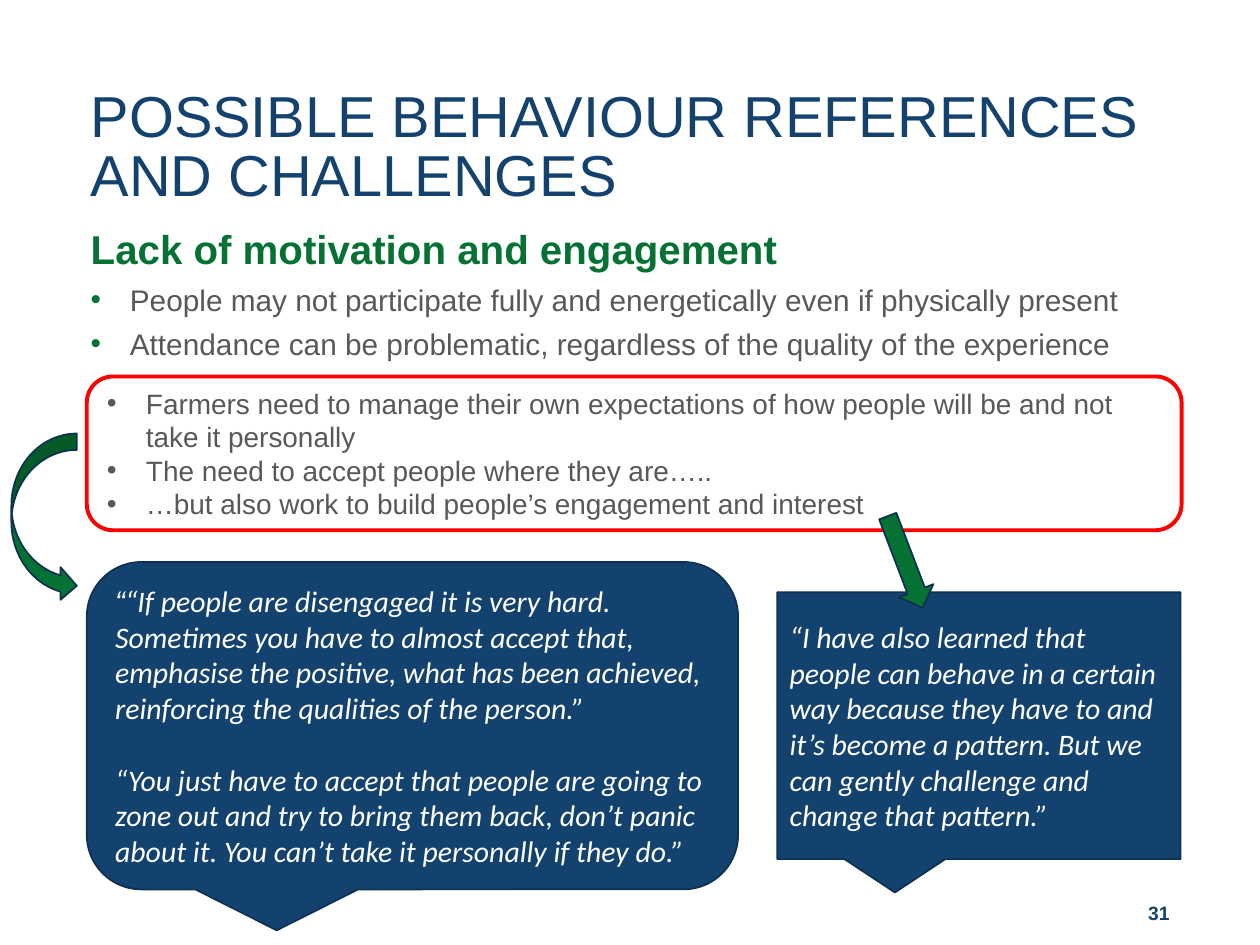
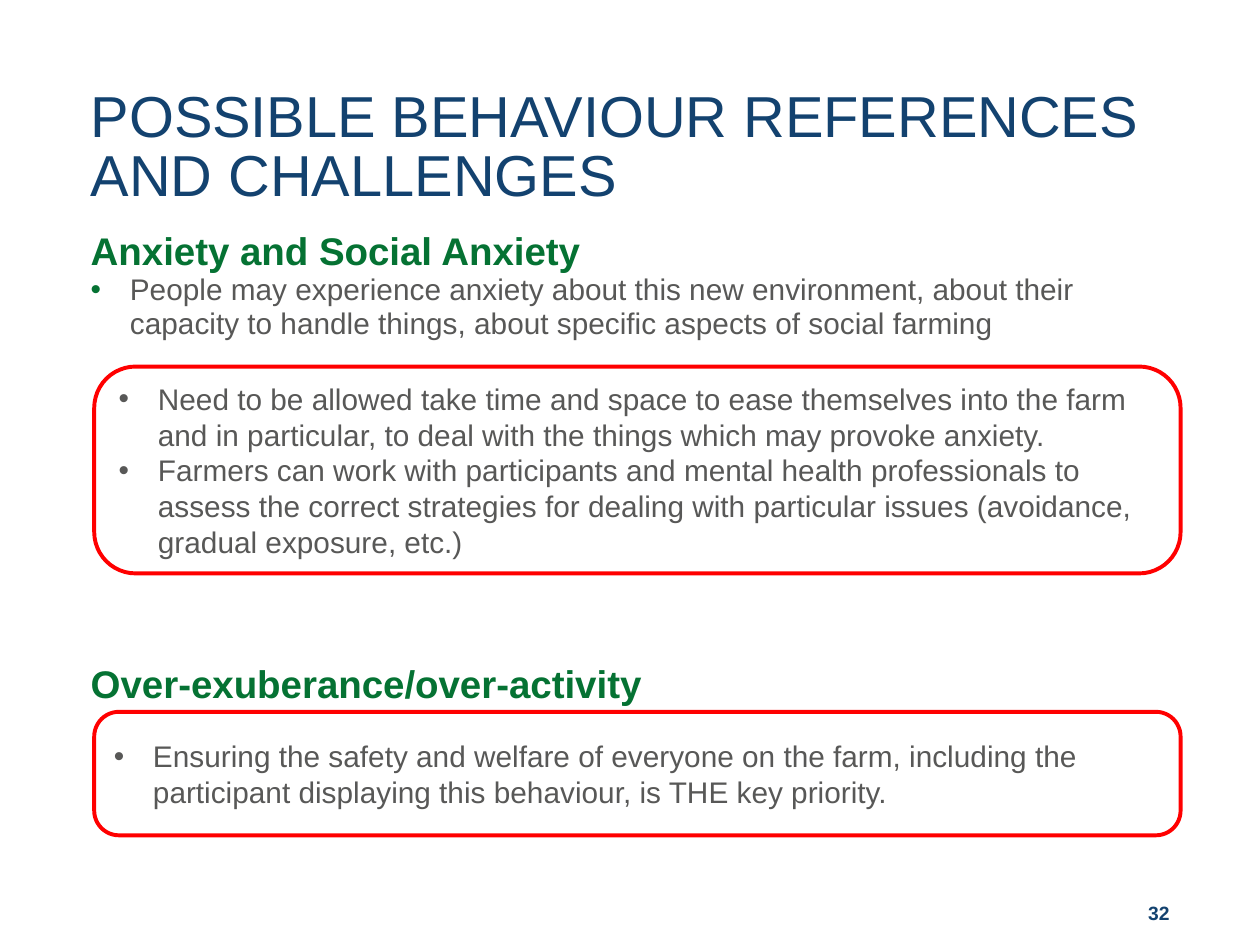
from lxml import etree
from pptx import Presentation
from pptx.dml.color import RGBColor
from pptx.enum.shapes import MSO_SHAPE as Shape
from pptx.enum.text import MSO_ANCHOR as Anchor, PP_ALIGN as Align
from pptx.oxml.ns import qn
from pptx.util import Cm, Pt

NAVY = RGBColor(0x13, 0x42, 0x6F)
NAVY_EDGE = RGBColor(0x0E, 0x31, 0x52)
GREEN = RGBColor(0x05, 0x72, 0x33)
GREY = RGBColor(0x58, 0x58, 0x57)
RED = RGBColor(0xFF, 0x00, 0x00)
WHITE = RGBColor(0xFF, 0xFF, 0xFF)

MARGIN = 1.8
BODY_LEFT, BODY_WIDTH = 0.03, 23.8
TITLE = "POSSIBLE BEHAVIOUR REFERENCES AND CHALLENGES"


# Text
def add_run(p, text, size=17, color=GREY, font="Arial", bold=False, italic=False):
    r = p.add_run()
    r.text = text
    f = r.font
    f.size, f.name, f.bold, f.italic = Pt(size), font, bold, italic
    f.color.rgb = color


def add_bullet(p, color=None):
    pPr = p._p.get_or_add_pPr()
    pPr.set("marL", str(Cm(0.79)))
    pPr.set("indent", str(-Cm(0.79)))
    if color is not None:
        clr = etree.SubElement(pPr, qn("a:buClr"))
        etree.SubElement(clr, qn("a:srgbClr"), val=str(color))
    etree.SubElement(pPr, qn("a:buFont"), typeface="Arial")
    etree.SubElement(pPr, qn("a:buChar"), char="•")


def write(tf, text, align=Align.LEFT, line=None, before=0, bullet=False,
          bullet_color=None, **run_format):
    """Add a paragraph, using the empty first one if there is one."""
    p = tf.paragraphs[0]
    if p.runs:
        p = tf.add_paragraph()
    if bullet:
        add_bullet(p, bullet_color)
    p.alignment = align
    p.space_before = Pt(before)
    if line:
        p.line_spacing = Pt(line)
    add_run(p, text, **run_format)
    return p


def add_textbox(s, left, top, width, height, insets, anchor=Anchor.TOP):
    tf = s.shapes.add_textbox(Cm(left), Cm(top), Cm(width), Cm(height)).text_frame
    tf.word_wrap = True
    tf.vertical_anchor = anchor
    tf.margin_left, tf.margin_top, tf.margin_right, tf.margin_bottom = map(Cm, insets)
    return tf


# Shapes
def add_shape(s, kind, left, top, width, height, fill=NAVY, edge=NAVY_EDGE, weight=1):
    sp = s.shapes.add_shape(kind, Cm(left), Cm(top), Cm(width), Cm(height))
    sp.shadow.inherit = False
    sp.fill.solid()
    sp.fill.fore_color.rgb = fill
    sp.line.color.rgb = edge
    sp.line.width = Pt(weight)
    sp.text_frame.word_wrap = True
    sp.text_frame.vertical_anchor = Anchor.MIDDLE
    return sp


def add_red_box(s, left, top, width, height, bullets, size=17, rounding=0.2):
    sp = add_shape(s, Shape.ROUNDED_RECTANGLE, left, top, width, height,
                   fill=WHITE, edge=RED, weight=2.25)
    sp.adjustments[0] = rounding
    for text in bullets:
        write(sp.text_frame, text, bullet=True, size=size)


# Slide parts
def add_section(s, top, height, heading, bullets=(), size=22, gap=0):
    tf = add_textbox(s, BODY_LEFT, top, BODY_WIDTH, height, (MARGIN, 0, 0, 0))
    write(tf, heading, line=27, size=size, color=GREEN, bold=True)
    for text in bullets:
        write(tf, text, line=19.2, before=gap, bullet=True, bullet_color=GREEN)


def add_slide(prs, number):
    s = prs.slides.add_slide(prs.slide_layouts[6])
    tf = add_textbox(s, 20.22, 17.5, 5.16, 1.52, (0, 0.13, MARGIN, 0.41), Anchor.BOTTOM)
    write(tf, str(number), align=Align.RIGHT, line=13.3, size=11, color=NAVY, bold=True)
    tf = add_textbox(s, BODY_LEFT, 1.88, 24.21, 2.24, (MARGIN, 0.13, 0.25, 0.13),
                     Anchor.MIDDLE)
    write(tf, TITLE, line=34, size=33, color=NAVY)
    return s


def build_motivation(prs):
    s = add_slide(prs, 31)
    add_section(s, 4.55, 2.95, "Lack of motivation and engagement", [
        "People may not participate fully and energetically even if physically present",
        "Attendance can be problematic, regardless of the quality of the experience",
    ], size=23, gap=6)

    # Quotes
    quote = dict(color=WHITE, italic=True)
    calibri = dict(quote, font="Calibri")
    tf = add_shape(s, Shape.ROUNDED_RECTANGULAR_CALLOUT,
                   1.75, 11.33, 13.13, 6.6).text_frame
    p = write(tf, "“", **quote)
    add_run(p, "“If people are disengaged it is very hard. Sometimes you have to "
               "almost accept that, emphasise the positive, what has been achieved, "
               "reinforcing the qualities of the person.”", **calibri)
    write(tf, "“You just have to accept that people are going to zone out and try to "
              "bring them back, don’t panic about it. You can’t take it personally "
              "if they do.”", before=20.5, **calibri)

    add_red_box(s, 1.75, 7.59, 22.07, 3.1, [
        "Farmers need to manage their own expectations of how people will be and not "
        "take it personally",
        "The need to accept people where they are…..",
        "…but also work to build people’s engagement and interest",
    ], size=16, rounding=0.17)

    tf = add_shape(s, Shape.RECTANGULAR_CALLOUT, 15.67, 11.94, 8.13, 5.38).text_frame
    write(tf, "“I have also learned that people can behave in a certain way because "
              "they have to and it’s become a pattern. But we can gently challenge and "
              "change that pattern.”", **calibri)

    # Arrows from the advice to the quotes
    add_shape(s, Shape.CURVED_RIGHT_ARROW, 0.23, 8.74, 1.32, 3.4, fill=GREEN)
    arrow = add_shape(s, Shape.DOWN_ARROW, 17.88, 10.34, 0.74, 1.98, fill=GREEN)
    arrow.rotation = 339.1


def build_anxiety(prs):
    s = add_slide(prs, 32)
    add_section(s, 4.55, 2.4, "Anxiety and Social Anxiety", [
        "People may experience anxiety about this new environment, about their "
        "capacity to handle things, about specific aspects of social farming",
    ])
    add_red_box(s, 1.9, 7.39, 21.9, 4.17, [
        "Need to be allowed take time and space to ease themselves into the farm and "
        "in particular, to deal with the things which may provoke anxiety.",
        "Farmers can work with participants and mental health professionals to assess "
        "the correct strategies for dealing with particular issues (avoidance, "
        "gradual exposure, etc.)",
    ])
    add_section(s, 13.28, 1, "Over-exuberance/over-activity")
    add_red_box(s, 1.9, 14.35, 21.9, 2.49, [
        "Ensuring the safety and welfare of everyone on the farm, including the "
        "participant displaying this behaviour, is THE key priority.",
    ])


def main():
    prs = Presentation()
    prs.slide_width, prs.slide_height = Cm(25.4), Cm(19.05)
    build_motivation(prs)
    build_anxiety(prs)
    prs.save("out.pptx")


if __name__ == "__main__":
    main()
